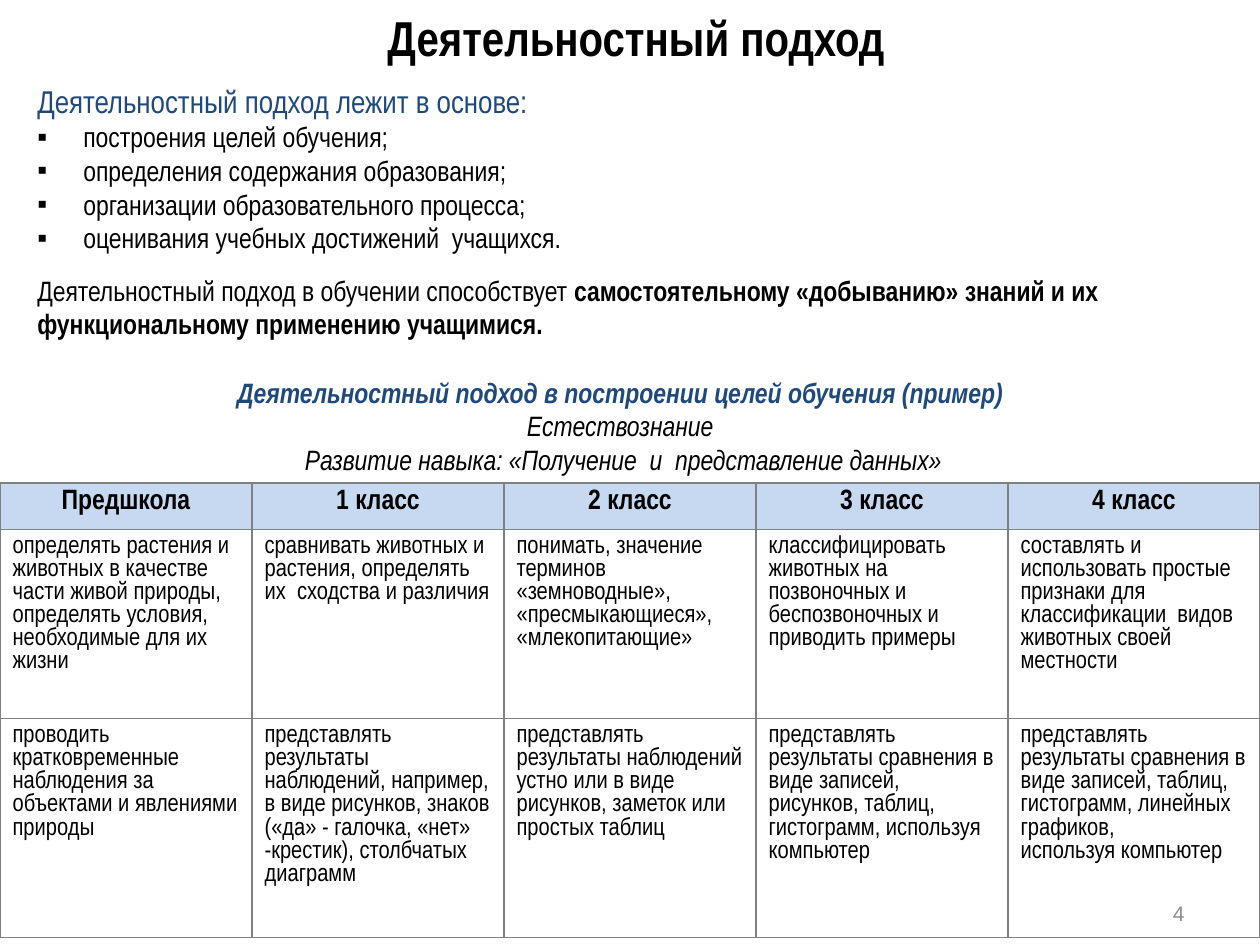
from dataclasses import dataclass

import pptx
import pptx.util
from lxml import etree
from pptx.dml.color import RGBColor
from pptx.enum.text import MSO_ANCHOR, PP_ALIGN
from pptx.oxml.ns import qn

EMU_PER_PX = 914400 / 126
NARROW = "Arial Narrow"
COLORS = {"black": "000000", "navy": "1F497D", "header": "C6D9F1",
          "border": "808080", "number": "8C8C8C"}


@dataclass
class Run:
    text: str
    size: int = 16
    color: str = "black"
    bold: bool = False
    italic: bool = False
    font: str = NARROW


@dataclass
class Line:
    runs: list[Run]
    align: PP_ALIGN = PP_ALIGN.LEFT
    spacing: float = 1.0
    before: float = 0
    bullet: bool = False


@dataclass
class Block:
    left: int
    top: int
    width: int
    height: int
    lines: list[Line]
    anchor: MSO_ANCHOR = MSO_ANCHOR.MIDDLE
    inset_top: int = 6


def px(length: int) -> int:
    return round(length * EMU_PER_PX)


def add_bullet(paragraph) -> None:
    properties = paragraph._p.get_or_add_pPr()
    properties.set("marL", str(px(46)))
    properties.set("indent", str(-px(46)))
    etree.SubElement(properties, qn("a:buFont"), typeface="Arial")
    etree.SubElement(properties, qn("a:buChar"), char="▪")


def write_lines(frame, lines: list[Line]) -> None:
    frame.text = "\n".join("" for _ in lines)
    for paragraph, line in zip(frame.paragraphs, lines):
        paragraph.alignment = line.align
        paragraph.line_spacing = line.spacing
        paragraph.space_before = pptx.util.Pt(line.before)
        if line.bullet:
            add_bullet(paragraph)
        for part in line.runs:
            run = paragraph.add_run()
            run.text = part.text
            run.font.name = part.font
            run.font.size = pptx.util.Pt(part.size)
            run.font.bold = part.bold
            run.font.italic = part.italic
            run.font.color.rgb = RGBColor.from_string(COLORS[part.color])


def add_block(slide, block: Block) -> None:
    box = slide.shapes.add_textbox(px(block.left), px(block.top), px(block.width), px(block.height))
    frame = box.text_frame
    frame.word_wrap = True
    frame.vertical_anchor = block.anchor
    frame.margin_top = px(block.inset_top)
    write_lines(frame, block.lines)


def add_borders(cell) -> None:
    properties = cell._tc.get_or_add_tcPr()
    for index, side in enumerate(("lnL", "lnR", "lnT", "lnB")):
        border = etree.Element(qn(f"a:{side}"), w=str(pptx.util.Pt(1)))
        fill = etree.SubElement(border, qn("a:solidFill"))
        etree.SubElement(fill, qn("a:srgbClr"), val=COLORS["border"])
        properties.insert(index, border)


def add_goals_table(slide, rows: list[list[str]], heights: list[int]) -> None:
    table = slide.shapes.add_table(len(rows), len(rows[0]), 0, px(483),
                                   px(1260), px(sum(heights))).table
    table.first_row = False
    table.horz_banding = False
    for r, (texts, height) in enumerate(zip(rows, heights)):
        table.rows[r].height = px(height)
        header = r == 0
        for c, text in enumerate(texts):
            cell = table.cell(r, c)
            align = PP_ALIGN.CENTER if header else PP_ALIGN.LEFT
            size = 16 if header else 14
            write_lines(cell.text_frame, [Line([Run(part, size, bold=header)], align)
                                          for part in text.split("\n")])
            if header:
                cell.fill.solid()
                cell.fill.fore_color.rgb = RGBColor.from_string(COLORS["header"])
            else:
                cell.fill.background()
            add_borders(cell)


FOUNDATIONS = ["построения целей обучения;", "определения содержания образования;",
               "организации образовательного процесса;",
               "оценивания учебных достижений  учащихся."]

TITLE = Block(69, 8, 1134, 49,
              [Line([Run("Деятельностный подход", 28, bold=True)], PP_ALIGN.CENTER)],
              MSO_ANCHOR.TOP, 0)
APPROACH = Block(25, 56, 1221, 292, [
    Line([Run("Деятельностный подход лежит в основе:", 18, "navy")], spacing=1.5),
    *[Line([Run(item)], bullet=True) for item in FOUNDATIONS],
    Line([Run("Деятельностный подход в обучении способствует "),
          Run("самостоятельному «добыванию» знаний и их функциональному "
              "применению учащимися.", bold=True)], before=10.8),
])
EXAMPLE = Block(25, 363, 1197, 159, [
    Line([Run("Деятельностный подход в построении целей обучения (пример) ",
              color="navy", bold=True, italic=True)], PP_ALIGN.CENTER),
    Line([Run("Естествознание ", italic=True)], PP_ALIGN.CENTER),
    Line([Run("Развитие навыка: «Получение  и  представление данных»", italic=True)],
         PP_ALIGN.CENTER),
], MSO_ANCHOR.TOP, 12)
PAGE_NUMBER = Block(903, 888, 294, 50,
                    [Line([Run("4", 12, "number", font="Arial")], PP_ALIGN.RIGHT)])

GOALS = [
    ["Предшкола", "1 класс", "2 класс", "3 класс", "4 класс"],
    ["определять растения и животных в качестве части живой природы, определять условия, "
     "необходимые для их жизни",
     "сравнивать животных и растения, определять их  сходства и различия",
     "понимать, значение терминов «земноводные», «пресмыкающиеся»,  «млекопитающие»",
     "классифицировать животных на позвоночных и беспозвоночных и приводить примеры",
     "составлять и использовать простые признаки для классификации  видов животных "
     "своей местности"],
    ["проводить кратковременные наблюдения за объектами и явлениями природы",
     "представлять результаты наблюдений, например, в виде рисунков, знаков "
     "(«да» - галочка, «нет» -крестик), столбчатых диаграмм",
     "представлять результаты наблюдений устно или в виде рисунков, заметок или простых таблиц",
     "представлять результаты сравнения в виде записей,  рисунков, таблиц, гистограмм, "
     "используя компьютер",
     "представлять результаты сравнения в виде записей, таблиц, гистограмм, "
     "линейных графиков,\nиспользуя компьютер"],
]


def main() -> None:
    deck = pptx.Presentation()
    deck.slide_width, deck.slide_height = px(1260), px(945)
    slide = deck.slides.add_slide(deck.slide_layouts[6])
    for block in (TITLE, APPROACH, EXAMPLE):
        add_block(slide, block)
    add_goals_table(slide, GOALS, [45, 189, 219])
    add_block(slide, PAGE_NUMBER)
    deck.save("out.pptx")


if __name__ == "__main__":
    main()
